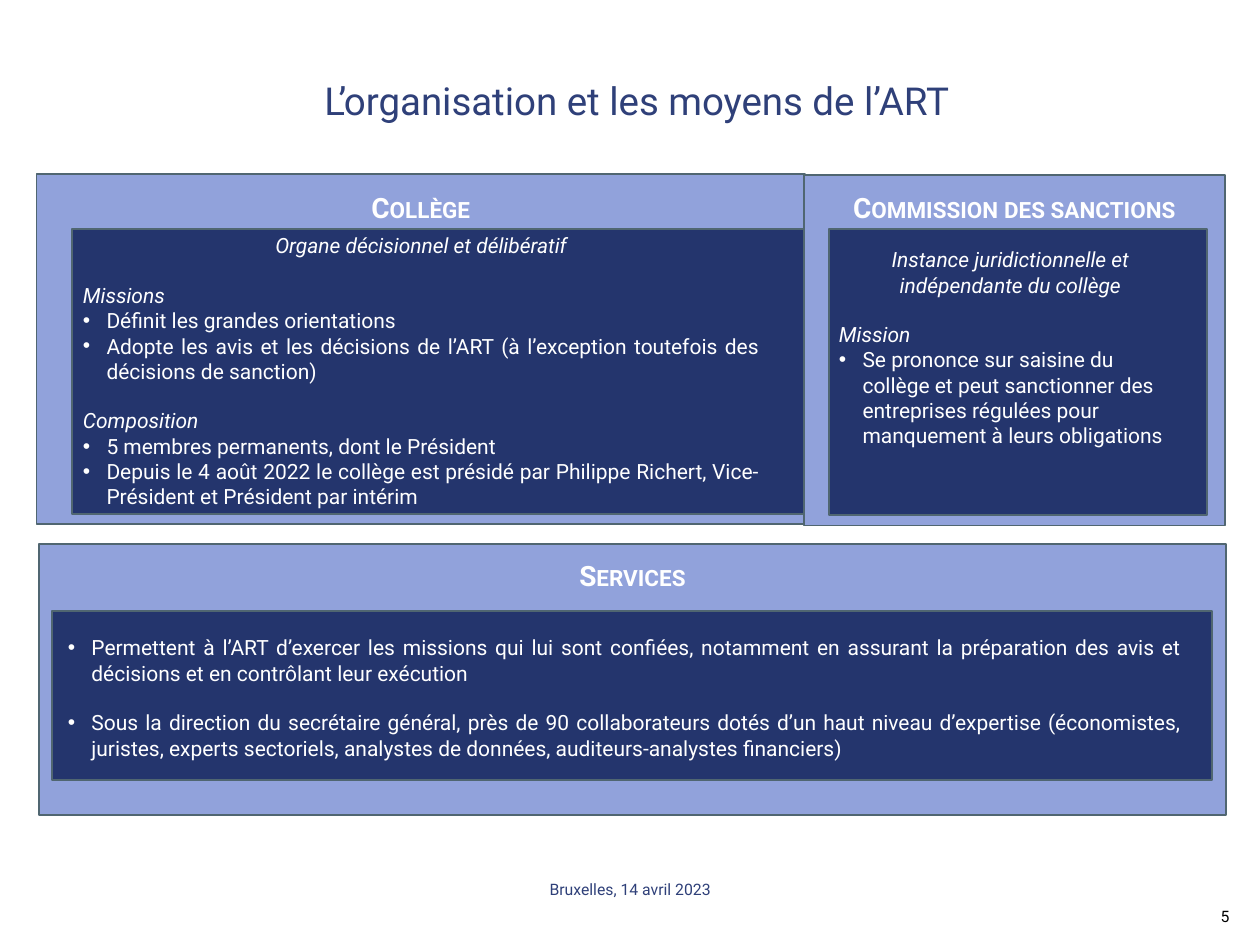
from dataclasses import dataclass

from lxml import etree
from pptx import Presentation
from pptx.dml.color import RGBColor
from pptx.enum.shapes import MSO_SHAPE
from pptx.enum.text import MSO_ANCHOR, PP_ALIGN
from pptx.oxml.ns import qn
from pptx.util import Pt

RECT = MSO_SHAPE.RECTANGLE
MIDDLE = MSO_ANCHOR.MIDDLE
LEFT, CENTER, JUSTIFY = PP_ALIGN.LEFT, PP_ALIGN.CENTER, PP_ALIGN.JUSTIFY

WHITE = RGBColor(0xFF, 0xFF, 0xFF)
BLACK = RGBColor(0x00, 0x00, 0x00)
LIGHT = RGBColor(0x91, 0xA2, 0xDB)
NAVY = RGBColor(0x24, 0x35, 0x6D)
BLUE = RGBColor(0x2F, 0x40, 0x79)
EDGE = RGBColor(0x50, 0x66, 0x71)

FONT = "Roboto"
INDENT = 13.5
GAP = 14


@dataclass
class Box:
    left: float
    top: float
    width: float
    height: float

    def points(self) -> tuple:
        return Pt(self.left), Pt(self.top), Pt(self.width), Pt(self.height)


@dataclass
class Line:
    text: str
    align: PP_ALIGN = JUSTIFY
    bullet: bool = False
    before: float = 0


@dataclass
class Panel:
    head: str
    frame: Box
    drop: float  # from the top of the frame to the heading
    inner: Box
    body: Box
    lines: list[Line]


PANELS = [
    Panel(
        "Collège", Box(20.9, 99.4, 439.2, 200.2), 5.7,
        Box(41, 131, 426.2, 162.7), Box(40.3, 129.6, 401, 167),
        [
            Line("Organe décisionnel et délibératif", CENTER),
            Line("Missions", before=GAP),
            Line("Définit les grandes orientations", bullet=True),
            Line("Adopte les avis et les décisions de l’ART (à l’exception "
                 "toutefois des décisions de sanction)", bullet=True),
            Line("Composition", before=GAP),
            Line("5 membres permanents, dont le Président", bullet=True),
            Line("Depuis le 4 août 2022 le collège est présidé par Philippe "
                 "Richert, Vice-Président et Président par intérim", bullet=True),
        ],
    ),
    Panel(
        "Commission des sanctions", Box(459.4, 100.1, 240.5, 200.2), 5,
        Box(473.8, 131, 216, 163.4), Box(472.3, 137.5, 210.2, 123.8),
        [
            Line("Instance juridictionnelle et indépendante du collège", CENTER),
            Line("Mission", LEFT, before=GAP),
            Line("Se prononce sur saisine du collège et peut sanctionner des "
                 "entreprises régulées pour manquement à leurs obligations",
                 LEFT, bullet=True),
        ],
    ),
    Panel(
        "Services", Box(22.3, 311, 678.2, 154.8), 4.4,
        Box(29.5, 349.2, 663.1, 96.5), Box(31.7, 359.3, 650.9, 80),
        [
            Line("Permettent à l’ART d’exercer les missions qui lui sont "
                 "confiées, notamment en assurant la préparation des avis et "
                 "décisions et en contrôlant leur exécution", bullet=True),
            Line("Sous la direction du secrétaire général, près de 90 "
                 "collaborateurs dotés d’un haut niveau d’expertise "
                 "(économistes, juristes, experts sectoriels, analystes de "
                 "données, auditeurs-analystes financiers)",
                 bullet=True, before=GAP),
        ],
    ),
]


def style(para, size: float, color: RGBColor, align: PP_ALIGN = CENTER) -> None:
    para.alignment = align
    para.font.name = FONT
    para.font.size = Pt(size)
    para.font.color.rgb = color


def add_rect(slide, box: Box, fill: RGBColor) -> None:
    rect = slide.shapes.add_shape(RECT, *box.points())
    rect.shadow.inherit = False
    rect.fill.solid()
    rect.fill.fore_color.rgb = fill
    rect.line.color.rgb = EDGE
    rect.line.width = Pt(1)


def add_frame(slide, box: Box):
    frame = slide.shapes.add_textbox(*box.points()).text_frame
    frame.word_wrap = True
    return frame


def add_label(slide, box: Box, text: str, size: float, color: RGBColor):
    para = add_frame(slide, box).paragraphs[0]
    para.text = text
    style(para, size, color)
    return para


def add_bullet(para) -> None:
    props = para._p.get_or_add_pPr()
    props.set("marL", str(Pt(INDENT)))
    props.set("indent", str(-Pt(INDENT)))
    font = etree.Element(qn("a:buFont"), typeface="Arial")
    mark = etree.Element(qn("a:buChar"), char="•")
    final = props.find(qn("a:defRPr"))
    final.addprevious(font)
    final.addprevious(mark)


def add_lines(slide, box: Box, lines: list[Line]) -> None:
    frame = add_frame(slide, box)
    for index, line in enumerate(lines):
        para = frame.add_paragraph() if index else frame.paragraphs[0]
        para.text = line.text
        para.space_before = Pt(line.before)
        style(para, 12, WHITE, line.align)
        para.font.italic = not line.bullet
        if line.bullet:
            add_bullet(para)


def add_panel(slide, panel: Panel) -> None:
    frame = panel.frame
    add_rect(slide, frame, LIGHT)
    spot = Box(frame.left, frame.top + panel.drop, frame.width, 26.6)
    head = add_label(slide, spot, panel.head, 16, WHITE)
    head.font.bold = True
    head.runs[0]._r.get_or_add_rPr().set("cap", "small")
    add_rect(slide, panel.inner, NAVY)
    add_lines(slide, panel.body, panel.lines)


def add_title(slide, box: Box, text: str) -> None:
    title = slide.shapes.title
    title.left, title.top, title.width, title.height = box.points()
    title.text_frame.vertical_anchor = MIDDLE
    para = title.text_frame.paragraphs[0]
    para.text = text
    para.line_spacing = 0.9
    style(para, 22, BLUE)


def main() -> None:
    deck = Presentation()
    deck.slide_width, deck.slide_height = Pt(720), Pt(540)
    slide = deck.slides.add_slide(deck.slide_layouts[5])
    add_title(slide, Box(44.6, 41, 638.6, 35.3),
              "L’organisation et les moyens de l’ART")
    for panel in PANELS:
        add_panel(slide, panel)
    place = add_label(slide, Box(238.3, 500.4, 243.4, 14.4),
                      "Bruxelles, 14 avril 2023", 9, BLUE)
    place.line_spacing = 0.9
    add_label(slide, Box(682, 514.8, 36, 18), "5", 9, BLACK)
    deck.save("out.pptx")


if __name__ == "__main__":
    main()
